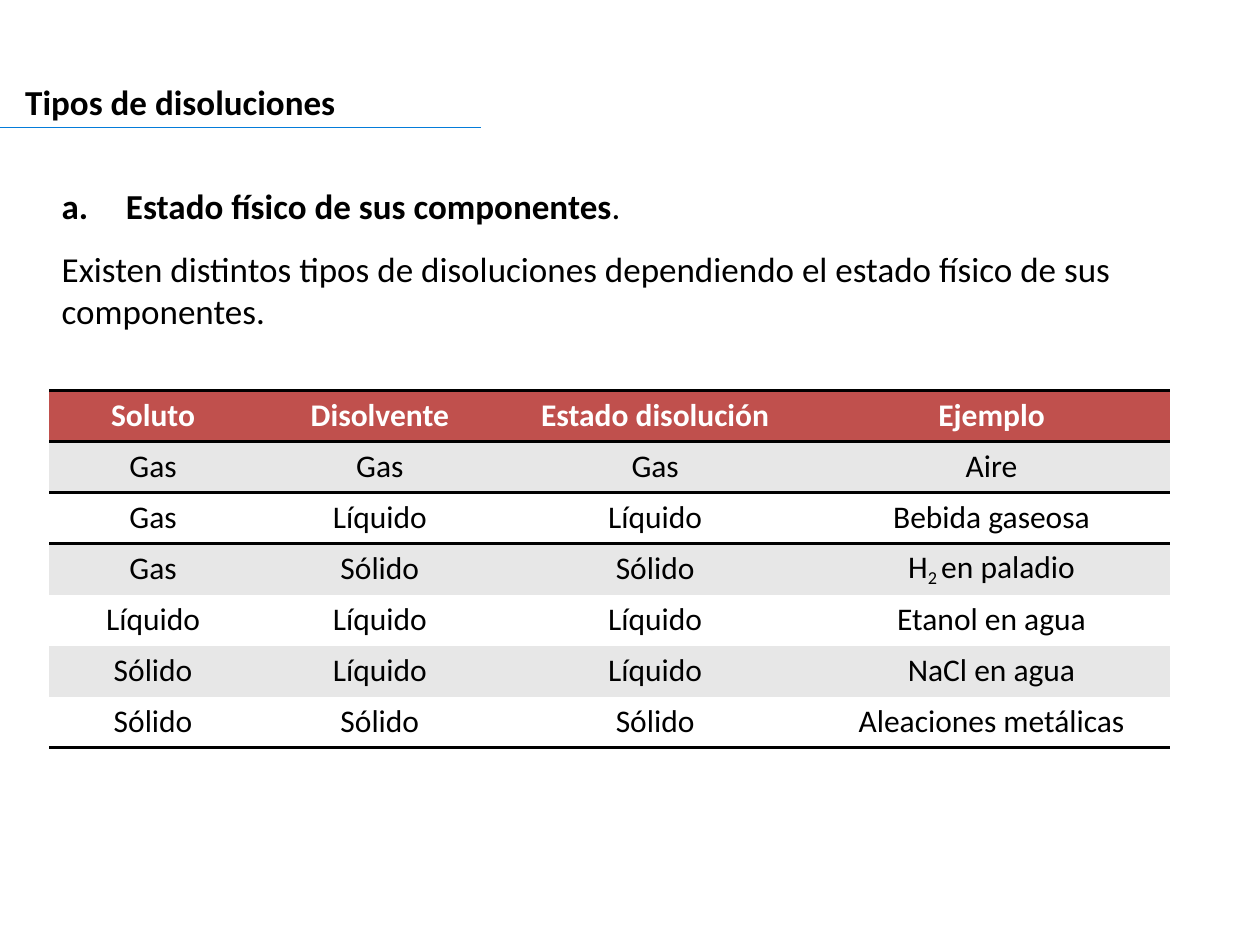
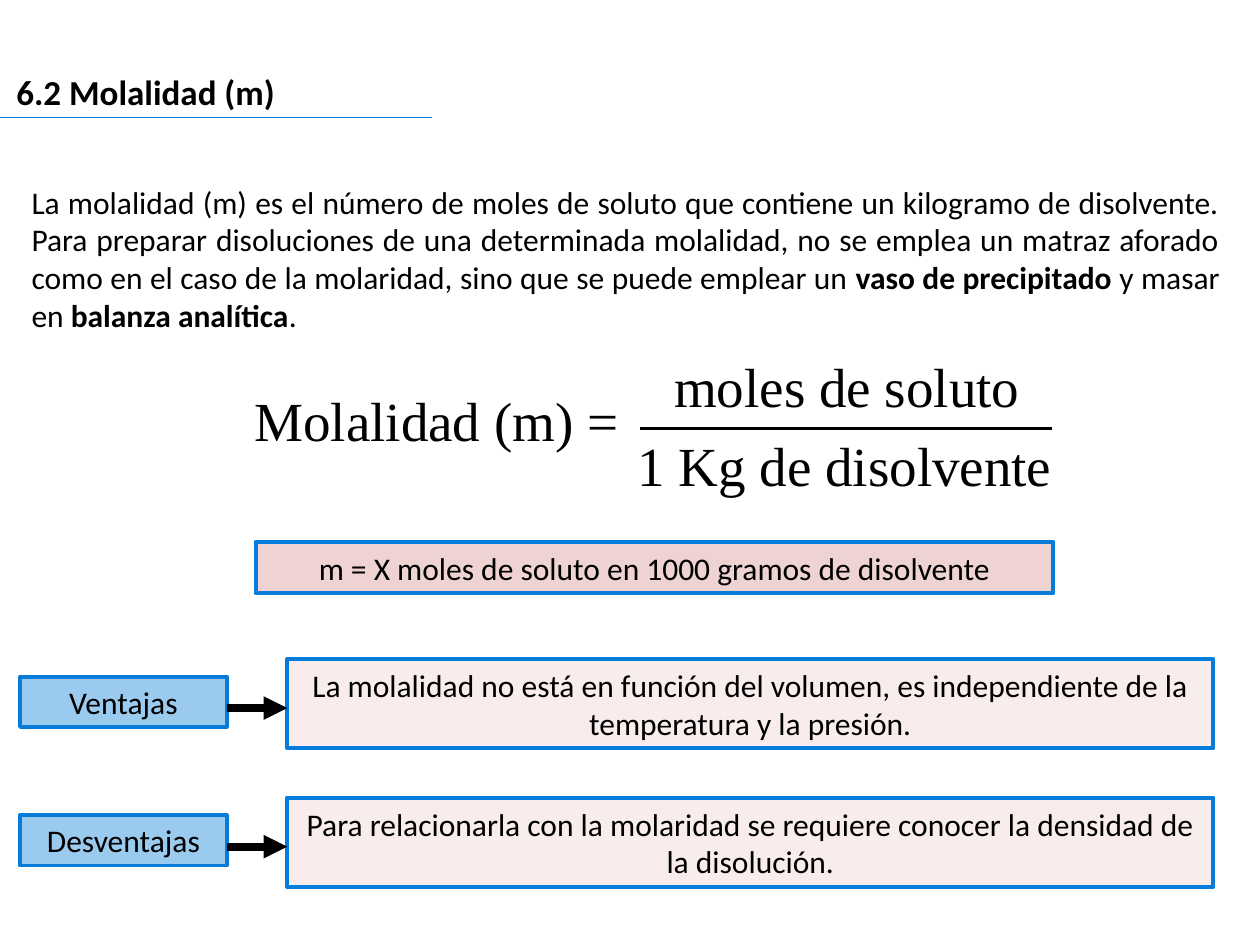
from lxml import etree
from pptx import Presentation
from pptx.dml.color import RGBColor
from pptx.enum.shapes import MSO_CONNECTOR, MSO_SHAPE
from pptx.enum.text import MSO_ANCHOR, MSO_AUTO_SIZE, PP_ALIGN
from pptx.oxml.ns import qn
from pptx.util import Inches, Pt

LEFT, CENTER, JUSTIFY = PP_ALIGN.LEFT, PP_ALIGN.CENTER, PP_ALIGN.JUSTIFY
TOP, MIDDLE = MSO_ANCHOR.TOP, MSO_ANCHOR.MIDDLE
STRAIGHT, RECTANGLE = MSO_CONNECTOR.STRAIGHT, MSO_SHAPE.RECTANGLE

# Shared style
BLACK, WHITE, BLUE, RED, GREY = "000000", "FFFFFF", "057CD9", "C0504D", "E7E7E7"
BODY_FONT, FORMULA_FONT = "Calibri", "Times New Roman"
TITLE_ONLY = 5
NO_TABLE_STYLE = "{2D5ABB26-0587-4C30-8999-92F81FD0307C}"

STATES_TABLE = [
    ["Soluto", "Disolvente", "Estado disolución", "Ejemplo"],
    ["Gas", "Gas", "Gas", "Aire"],
    ["Gas", "Líquido", "Líquido", "Bebida gaseosa"],
    ["Gas", "Sólido", "Sólido", ["H", ("2 ", "sub"), "en paladio"]],
    ["Líquido", "Líquido", "Líquido", "Etanol en agua"],
    ["Sólido", "Líquido", "Líquido", "NaCl en agua"],
    ["Sólido", "Sólido", "Sólido", "Aleaciones metálicas"],
]


def color(hex_value):
    return RGBColor.from_string(hex_value)


def write(paragraph, runs, size, hex_value=BLACK, font=BODY_FONT, bold=False, align=LEFT):
    """Add runs: plain strings, or (text, "bold" | "sub") pairs."""
    paragraph.alignment = align
    for item in [runs] if isinstance(runs, str) else runs:
        text, style = (item, None) if isinstance(item, str) else item
        run = paragraph.add_run()
        run.text = text
        run.font.name, run.font.size = font, Pt(size)
        run.font.bold = bold or style == "bold"
        run.font.color.rgb = color(hex_value)
        if style == "sub":
            run.font._element.set("baseline", "-21000")


def set_frame(frame, side=0, top=0.02, anchor=TOP, wrap=True):
    frame.margin_left = frame.margin_right = Inches(side)
    frame.margin_top, frame.margin_bottom = Inches(top), 0
    frame.vertical_anchor = anchor
    frame.word_wrap = wrap
    frame.auto_size = MSO_AUTO_SIZE.NONE


def add_text(slide, left, top, width, height, wrap=True):
    frame = slide.shapes.add_textbox(*map(Inches, (left, top, width, height))).text_frame
    set_frame(frame, side=0.01, wrap=wrap)
    return frame


def add_line(slide, x1, y1, x2, y2, hex_value, width, arrow=False):
    line = slide.shapes.add_connector(STRAIGHT, *map(Inches, (x1, y1, x2, y2)))
    line.line.color.rgb = color(hex_value)
    line.line.width = Pt(width)
    if arrow:
        etree.SubElement(line.line._get_or_add_ln(), qn("a:tailEnd"), type="triangle")
    etree.SubElement(line._element.spPr, qn("a:effectLst"))


def add_box(slide, left, top, width, height, text, fill, opacity):
    """Blue-framed rectangle with a translucent fill."""
    box = slide.shapes.add_shape(RECTANGLE, *map(Inches, (left, top, width, height)))
    box.shadow.inherit = False
    box.fill.solid()
    box.fill.fore_color.rgb = color(fill)
    fill_color = box._element.spPr.find(qn("a:solidFill"))[0]
    etree.SubElement(fill_color, qn("a:alpha"), val=str(opacity * 1000))
    box.line.color.rgb = color(BLUE)
    box.line.width = Pt(2.25)
    set_frame(box.text_frame, side=0.1, top=0, anchor=MIDDLE)
    write(box.text_frame.paragraphs[0], text, 18, align=CENTER)


def add_titled_slide(presentation, text, left, top, width, underline_end):
    slide = presentation.slides.add_slide(presentation.slide_layouts[TITLE_ONLY])
    title = slide.shapes.title
    title.left, title.top, title.width, title.height = map(Inches, (left, top, width, 0.36))
    set_frame(title.text_frame, side=0.01, wrap=False)
    write(title.text_frame.paragraphs[0], text, 20, bold=True)
    add_line(slide, 0, top + 0.39, underline_end, top + 0.39, BLUE, 0.72)
    return slide


def add_rule(cell, edge):
    """Black border on one edge of a cell: a:lnT or a:lnB."""
    border = etree.Element(qn(edge), w=str(Pt(2.25)))
    fill = etree.SubElement(border, qn("a:solidFill"))
    etree.SubElement(fill, qn("a:srgbClr"), val=BLACK)
    properties = cell._tc.get_or_add_tcPr()
    properties.insert(len(properties.findall(qn("a:lnT"))), border)


def add_states_table(slide, left, top):
    widths, indents, row_height = [1.64, 1.9, 2.52, 2.84], [0.01, 0.07, 0.02, 0], 0.405
    count = len(STATES_TABLE)
    table = slide.shapes.add_table(
        count, len(widths), Inches(left), Inches(top),
        Inches(sum(widths)), Inches(row_height * count)).table
    table._tbl.tblPr.find(qn("a:tableStyleId")).text = NO_TABLE_STYLE
    for column, width in zip(table.columns, widths):
        column.width = Inches(width)
    for row_index, texts in enumerate(STATES_TABLE):
        header = row_index == 0
        table.rows[row_index].height = Inches(row_height)
        for column_index, text in enumerate(texts):
            cell = table.cell(row_index, column_index)
            cell.margin_left = Inches(indents[column_index])
            cell.margin_right = cell.margin_top = cell.margin_bottom = 0
            cell.vertical_anchor = MIDDLE
            if header or row_index % 2:
                cell.fill.solid()
                cell.fill.fore_color.rgb = color(RED if header else GREY)
            else:
                cell.fill.background()
            if row_index < 3:
                add_rule(cell, "a:lnT")
            if row_index in (0, 1, count - 1):
                add_rule(cell, "a:lnB")
            write(cell.text_frame.paragraphs[0], text, 18,
                  WHITE if header else BLACK, bold=header, align=CENTER)


def add_formula(slide, left, top):
    """Fraction with its name on the left."""
    bar_left, bar_top = left + 3.07, top + 0.62
    parts = [
        ("Molalidad (m) =", left, top + 0.27, 2.9),
        ("moles de soluto", left + 3.33, top, 2.76),
        ("1 Kg de disolvente", left + 3.04, bar_top, 3.3),
    ]
    for text, x, y, width in parts:
        frame = add_text(slide, x, y, width, 0.55, wrap=False)
        write(frame.paragraphs[0], text, 31.5, font=FORMULA_FONT)
    add_line(slide, bar_left, bar_top, bar_left + 3.27, bar_top, BLACK, 1.5)


def add_assessment(slide, left, top, label, text):
    """Label box, arrow and explanation box."""
    label_width, arrow_length = 1.64, 0.48
    arrow_left = left + label_width
    text_left = arrow_left + arrow_length
    add_box(slide, text_left, top, 7.35, 0.71, text, RED, 10)
    add_box(slide, left, top + 0.14, label_width, 0.4, label, BLUE, 40)
    add_line(slide, arrow_left, top + 0.39, text_left, top + 0.39, BLACK, 4.5, arrow=True)


def build_types_slide(presentation):
    slide = add_titled_slide(presentation, "Tipos de disoluciones", 0.19, 0.62, 2.49, 3.82)
    frame = add_text(slide, 0.48, 1.44, 8.38, 1.18)
    heading = frame.paragraphs[0]
    properties = heading._p.get_or_add_pPr()
    properties.set("marL", str(Inches(0.51)))
    properties.set("indent", str(-Inches(0.51)))
    write(heading, [("a.\tEstado físico de sus componentes", "bold"), "."], 20)
    explanation = frame.add_paragraph()
    explanation.space_before = Pt(12)
    write(explanation, "Existen distintos tipos de disoluciones dependiendo el estado "
          "físico de sus componentes.", 20)
    add_states_table(slide, 0.39, 3.1)


def build_molality_slide(presentation):
    slide = add_titled_slide(presentation, "6.2 Molalidad (m)", 0.12, 0.54, 2.08, 3.43)
    definition = add_text(slide, 0.24, 1.43, 9.45, 1.23)
    write(definition.paragraphs[0], [
        "La molalidad (m) es el número de moles de soluto que contiene un kilogramo de "
        "disolvente. Para preparar disoluciones de una determinada molalidad, no se emplea "
        "un matraz aforado como en el caso de la molaridad, sino que se puede emplear un ",
        ("vaso de precipitado", "bold"), " y masar en ",
        ("balanza analítica", "bold"), "."], 18, align=JUSTIFY)
    add_formula(slide, 2.01, 2.78)
    add_box(slide, 2.03, 4.3, 6.33, 0.41,
            "m = X moles de soluto en 1000 gramos de disolvente", RED, 25)
    assessments = [
        ("Ventajas", "La molalidad no está en función del volumen, es independiente "
         "de la temperatura y la presión."),
        ("Desventajas", "Para relacionarla con la molaridad se requiere conocer la "
         "densidad de la disolución."),
    ]
    for index, (label, text) in enumerate(assessments):
        add_assessment(slide, 0.16, 5.23 + 1.1 * index, label, text)


def main():
    presentation = Presentation()
    presentation.slide_width, presentation.slide_height = Inches(10), Inches(7.5)
    build_types_slide(presentation)
    build_molality_slide(presentation)
    presentation.save("out.pptx")


if __name__ == "__main__":
    main()
